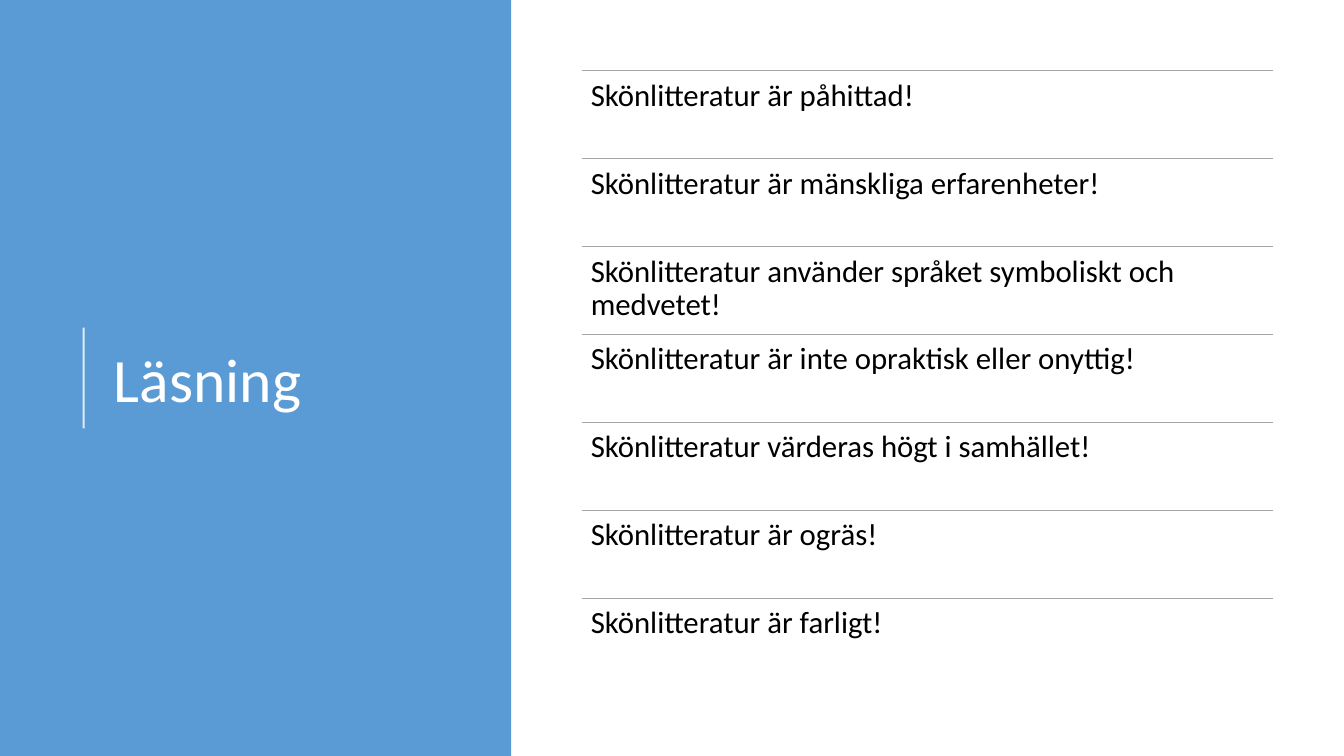
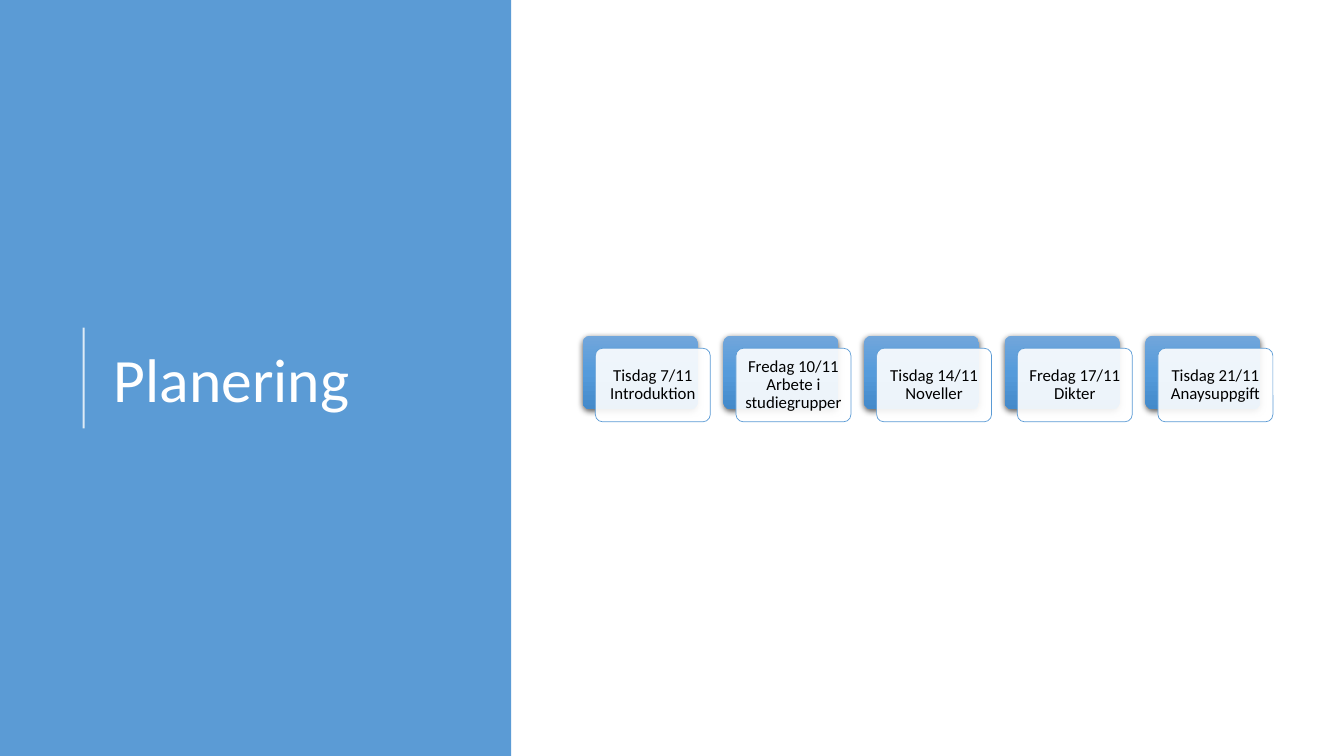
import copy
import dataclasses
from typing import Any

import lxml.etree
import pptx
import pptx.dml.color
import pptx.enum.shapes
import pptx.enum.text
import pptx.oxml.ns
import pptx.util

Inches = pptx.util.Inches
ALIGN = pptx.enum.text.PP_ALIGN
ANCHOR = pptx.enum.text.MSO_ANCHOR
SHAPE = pptx.enum.shapes.MSO_SHAPE

FONT = "Calibri"
BLUE = "5B9BD5"
WHITE = "FFFFFF"
BLACK = "000000"
GRAY = "A5A5A5"
CARD_GRADIENT = ((0, "71A6DB"), (0.5, "559BDB"), (1, "448ACA"))

STATEMENTS = (
    "Skönlitteratur är påhittad!",
    "Skönlitteratur är mänskliga erfarenheter!",
    "Skönlitteratur använder språket symboliskt och medvetet!",
    "Skönlitteratur är inte opraktisk eller onyttig!",
    "Skönlitteratur värderas högt i samhället!",
    "Skönlitteratur är ogräs!",
    "Skönlitteratur är farligt!",
)
LESSONS = (
    "Tisdag 7/11 Introduktion",
    "Fredag 10/11 Arbete i studiegrupper",
    "Tisdag 14/11 Noveller",
    "Fredag 17/11 Dikter",
    "Tisdag 21/11 Anaysuppgift",
)


@dataclasses.dataclass(frozen=True)
class Box:
    """A rectangle in inches."""

    left: float
    top: float
    width: float
    height: float

    def shifted(self, right: float = 0, down: float = 0) -> "Box":
        return dataclasses.replace(self, left=self.left + right, top=self.top + down)

    def lengths(self) -> tuple:
        return tuple(Inches(value) for value in dataclasses.astuple(self))


PANEL = Box(0, 0, 5.07, 7.5)
TITLE = Box(1.03, 0.78, 3.69, 6.02)
FIRST_ROW = Box(5.77, 0.7, 6.86, 0.87)
ROW_STEP = 0.872
FIRST_CARD = Box(5.78, 3.33, 1.14, 0.73)
CARD_STEP = 1.395
CARD_OFFSET = 0.125


def rgb(color: str) -> pptx.dml.color.RGBColor:
    return pptx.dml.color.RGBColor.from_string(color)


def add_child(parent: Any, tag: str, **attributes: str) -> Any:
    return lxml.etree.SubElement(parent, pptx.oxml.ns.qn(tag), attributes)


def set_opacity(element: Any, percent: int) -> None:
    """Apply opacity to the first RGB colour inside the element."""
    color = next(element.iter(pptx.oxml.ns.qn("a:srgbClr")))
    add_child(color, "a:alpha", val=str(percent * 1000))


def write_text(shape: Any, text: str, *, size: float, color: str = BLACK,
               align: Any = ALIGN.LEFT, anchor: Any = ANCHOR.TOP,
               insets: tuple = (0.1, 0.05)) -> None:
    """Write one paragraph; insets are horizontal and vertical inches."""
    frame = shape.text_frame
    frame.word_wrap = True
    frame.vertical_anchor = anchor
    frame.margin_left = frame.margin_right = Inches(insets[0])
    frame.margin_top = frame.margin_bottom = Inches(insets[1])
    paragraph = frame.paragraphs[0]
    paragraph.alignment = align
    paragraph.line_spacing = 0.9
    run = paragraph.add_run()
    run.text = text
    run.font.name = FONT
    run.font.size = pptx.util.Pt(size)
    run.font.color.rgb = rgb(color)


def add_text_box(slide: Any, box: Box, text: str, **text_format: Any) -> None:
    write_text(slide.shapes.add_textbox(*box.lengths()), text, **text_format)


def add_line(slide: Any, start: tuple, end: tuple, color: str, width: float) -> Any:
    points = [Inches(value) for value in (*start, *end)]
    line = slide.shapes.add_connector(pptx.enum.shapes.MSO_CONNECTOR.STRAIGHT, *points)
    line.line.color.rgb = rgb(color)
    line.line.width = pptx.util.Pt(width)
    add_child(line._element.spPr, "a:effectLst")
    return line


def add_filled_shape(slide: Any, kind: Any, box: Box, color: str) -> Any:
    shape = slide.shapes.add_shape(kind, *box.lengths())
    shape.shadow.inherit = False
    shape.fill.solid()
    shape.fill.fore_color.rgb = rgb(color)
    shape.line.fill.background()
    return shape


def add_rounded_card(slide: Any, box: Box, color: str) -> Any:
    card = add_filled_shape(slide, SHAPE.ROUNDED_RECTANGLE, box, color)
    card.adjustments[0] = 0.1
    return card


def set_gradient(shape: Any, stops: tuple) -> None:
    """Fill from top to bottom with (position, colour) stops."""
    shape.fill.gradient()
    shape.fill.gradient_angle = 270
    stop_list = next(shape._element.spPr.iter(pptx.oxml.ns.qn("a:gsLst")))
    while len(stop_list) < len(stops):
        stop_list.append(copy.deepcopy(stop_list[0]))
    for stop, (position, color) in zip(shape.fill.gradient_stops, stops):
        stop.position = position
        stop.color.rgb = rgb(color)


def add_shadow(shape: Any) -> None:
    effects = shape._element.spPr.find(pptx.oxml.ns.qn("a:effectLst"))
    shadow = add_child(effects, "a:outerShdw", blurRad=str(pptx.util.Pt(4.5)),
                       dist=str(pptx.util.Pt(1.5)), dir="5400000",
                       algn="ctr", rotWithShape="0")
    add_child(shadow, "a:srgbClr", val=BLACK)
    set_opacity(shadow, 63)


def add_titled_slide(presentation: Any, title: str) -> Any:
    """Add a slide with the blue title panel and its accent line."""
    slide = presentation.slides.add_slide(presentation.slide_layouts[6])
    add_filled_shape(slide, SHAPE.RECTANGLE, PANEL, BLUE)
    accent = add_line(slide, (0.83, 4.25), (0.83, 3.25), WHITE, 1.5)
    set_opacity(accent._element.spPr, 80)
    add_text_box(slide, TITLE, title, size=44, color=WHITE, anchor=ANCHOR.MIDDLE)
    return slide


def add_statement(slide: Any, row: Box, text: str) -> None:
    add_line(slide, (row.left, row.top), (row.left + row.width, row.top), GRAY, 0.5)
    add_text_box(slide, row, text, size=22, insets=(0.09, 0.09))


def add_lesson(slide: Any, box: Box, text: str) -> None:
    back = add_rounded_card(slide, box, BLUE)
    set_gradient(back, CARD_GRADIENT)
    add_shadow(back)

    front = add_rounded_card(slide, box.shifted(CARD_OFFSET, CARD_OFFSET), WHITE)
    set_opacity(front._element.spPr, 90)
    front.line.color.rgb = rgb(BLUE)
    front.line.width = pptx.util.Pt(0.5)
    write_text(front, text, size=12, align=ALIGN.CENTER, anchor=ANCHOR.MIDDLE,
               insets=(0.05, 0.05))


def main() -> None:
    presentation = pptx.Presentation()
    presentation.slide_width = Inches(13.33)
    presentation.slide_height = Inches(7.5)

    reading = add_titled_slide(presentation, "Läsning")
    for index, statement in enumerate(STATEMENTS):
        add_statement(reading, FIRST_ROW.shifted(down=index * ROW_STEP), statement)

    planning = add_titled_slide(presentation, "Planering")
    for index, lesson in enumerate(LESSONS):
        add_lesson(planning, FIRST_CARD.shifted(right=index * CARD_STEP), lesson)

    presentation.save("out.pptx")


if __name__ == "__main__":
    main()
